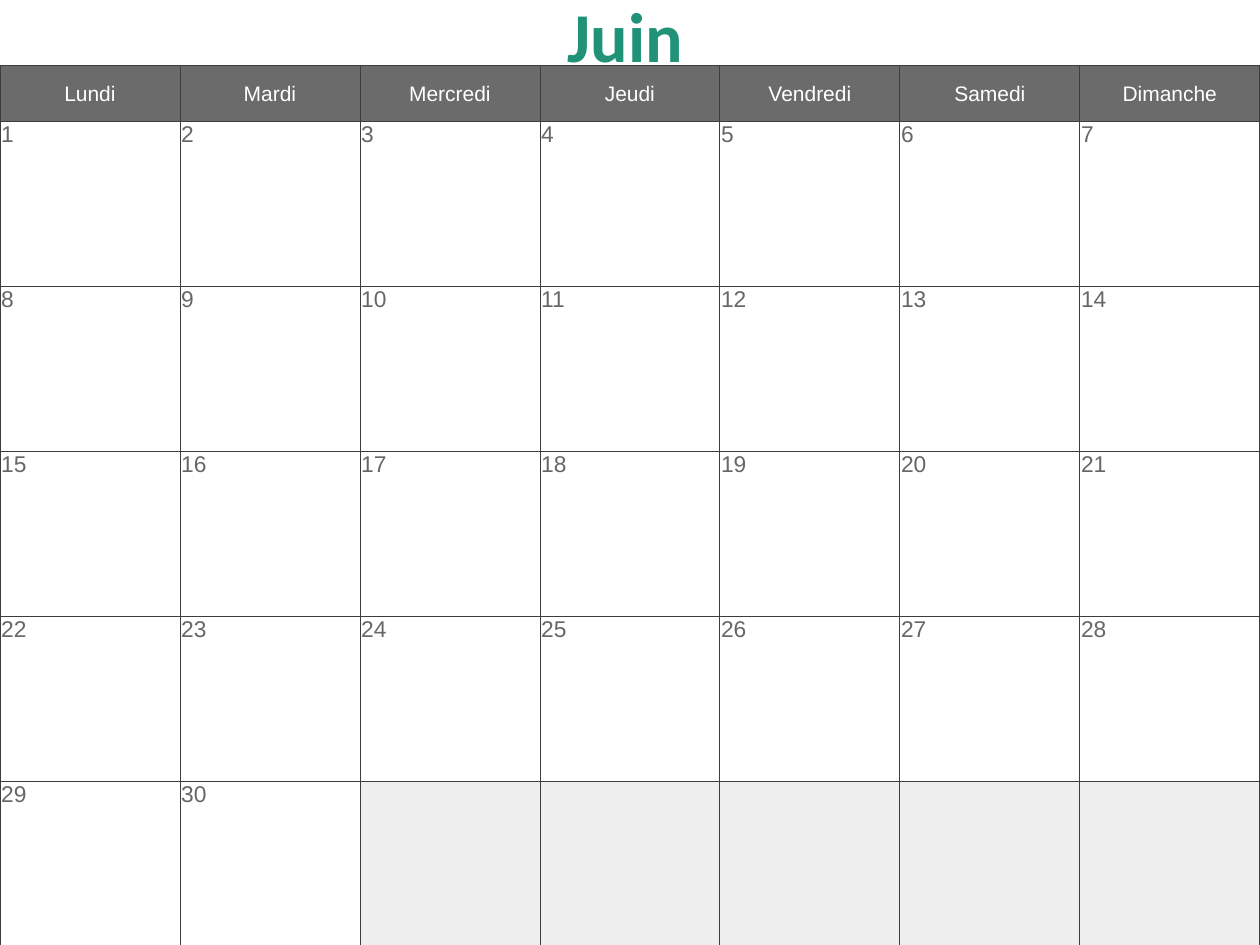
"""Build a one-slide monthly calendar for June, in French."""
from dataclasses import dataclass

from lxml.etree import SubElement
from pptx import Presentation
from pptx.dml.color import RGBColor
from pptx.enum.text import MSO_ANCHOR, PP_ALIGN
from pptx.oxml.ns import qn
from pptx.slide import Slide
from pptx.util import Inches, Pt

COLORS = {
    "title": "209277",
    "header": "6B6B6B",
    "header_text": "FFFFFF",
    "day": "FFFFFF",
    "day_text": "676767",
    "unused": "EEEEEE",
    "border": "3D3D3D",
}
WEEKDAYS = ["Lundi", "Mardi", "Mercredi", "Jeudi", "Vendredi", "Samedi", "Dimanche"]
DAYS_IN_MONTH = 30
WEEKS = 5
HEADER_HEIGHT = 0.44
WEEK_HEIGHT = 1.31


@dataclass
class CalendarPage:
    """Style and drawing methods for the current slide."""

    slide: Slide
    body_font: str = "Arial"
    title_font: str = "Calibri"
    border_width: float = 0.5

    def add_text(self, paragraph, text, size, color, font, bold=False):
        """Add one formatted run to a paragraph."""
        run = paragraph.add_run()
        run.text = text
        run.font.size = Pt(size)
        run.font.name = font
        run.font.bold = bold
        run.font.color.rgb = RGBColor.from_string(COLORS[color])

    def title(self, text, left, top, width, height):
        """Place the month name in the title placeholder."""
        month = self.slide.shapes.title
        month.left, month.top = Inches(left), Inches(top)
        month.width, month.height = Inches(width), Inches(height)
        month.text_frame.word_wrap = False
        paragraph = month.text_frame.paragraphs[0]
        paragraph.alignment = PP_ALIGN.CENTER
        self.add_text(paragraph, text, 40, "title", self.title_font, bold=True)

    def borders(self, cell):
        """Draw a thin line on all four sides of a cell."""
        properties = cell._tc.get_or_add_tcPr()
        for side in ("a:lnL", "a:lnR", "a:lnT", "a:lnB"):
            line = SubElement(properties, qn(side), w=str(Pt(self.border_width)))
            fill = SubElement(line, qn("a:solidFill"))
            SubElement(fill, qn("a:srgbClr"), val=COLORS["border"])

    def cell(self, cell, text, fill, size=13, color="day_text",
             align=PP_ALIGN.LEFT, anchor=MSO_ANCHOR.TOP):
        """Format one calendar cell and set its text."""
        self.borders(cell)
        cell.fill.solid()
        cell.fill.fore_color.rgb = RGBColor.from_string(COLORS[fill])
        cell.margin_left = cell.margin_right = cell.margin_top = Inches(0.01)
        cell.margin_bottom = 0
        cell.vertical_anchor = anchor
        paragraph = cell.text_frame.paragraphs[0]
        paragraph.alignment = align
        if text:
            self.add_text(paragraph, text, size, color, self.body_font)

    def calendar(self, left, top, width):
        """Add the weekday header and the grid of numbered days."""
        height = HEADER_HEIGHT + WEEKS * WEEK_HEIGHT
        grid = self.slide.shapes.add_table(
            WEEKS + 1, len(WEEKDAYS),
            Inches(left), Inches(top), Inches(width), Inches(height),
        ).table
        grid.first_row = grid.horz_banding = False
        for column, weekday in enumerate(WEEKDAYS):
            grid.columns[column].width = Inches(width / len(WEEKDAYS))
            self.cell(grid.cell(0, column), weekday, "header", 12, "header_text",
                      PP_ALIGN.CENTER, MSO_ANCHOR.MIDDLE)
        grid.rows[0].height = Inches(HEADER_HEIGHT)
        for week in range(WEEKS):
            grid.rows[week + 1].height = Inches(WEEK_HEIGHT)
            for column in range(len(WEEKDAYS)):
                day = week * len(WEEKDAYS) + column + 1
                in_month = day <= DAYS_IN_MONTH
                self.cell(grid.cell(week + 1, column), str(day) if in_month else "",
                          "day" if in_month else "unused")


def main():
    """Create the calendar and save it."""
    presentation = Presentation()
    presentation.slide_width, presentation.slide_height = Inches(10), Inches(7.5)
    page = CalendarPage(presentation.slides.add_slide(presentation.slide_layouts[5]))
    page.title("Juin", 4.4, -0.11, 1.13, 0.77)
    page.calendar(0, 0.52, 10)
    presentation.save("out.pptx")


if __name__ == "__main__":
    main()
